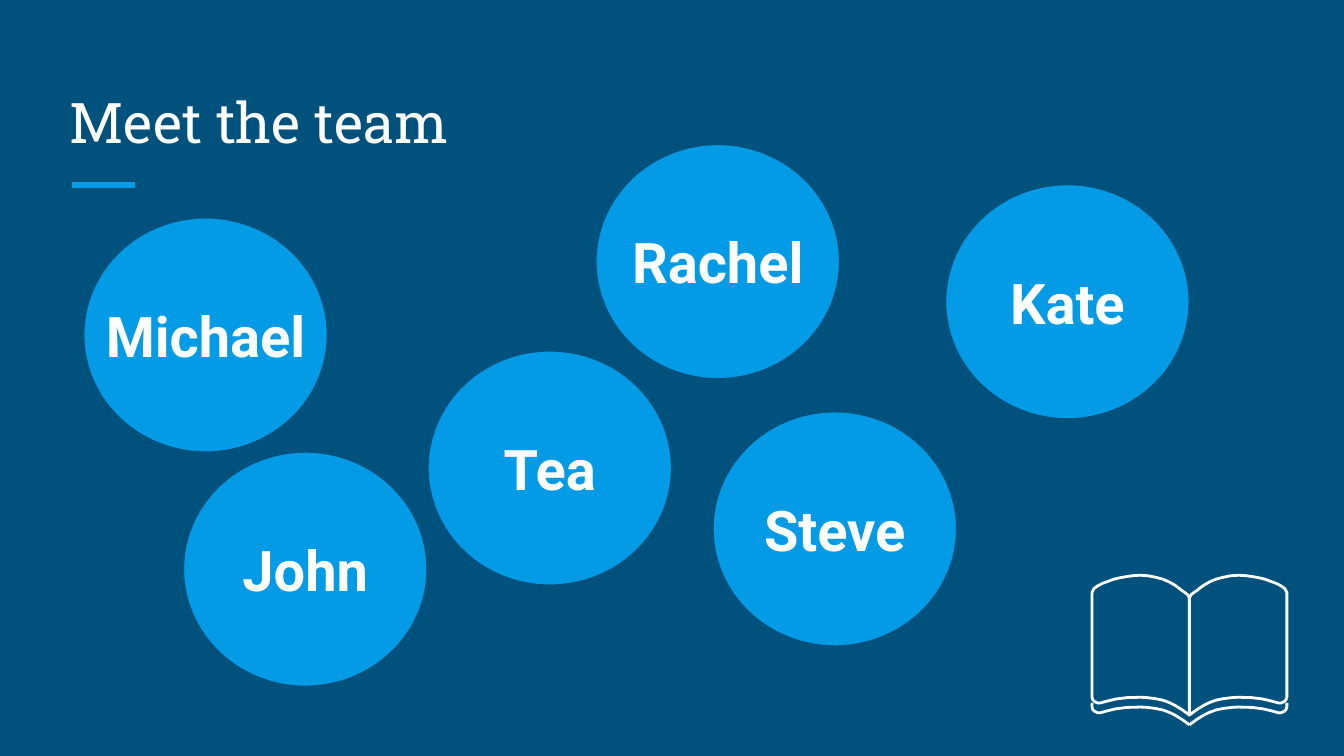
from lxml import etree
from pptx import Presentation
from pptx.dml.color import RGBColor
from pptx.enum import shapes, text
from pptx.oxml.ns import qn
from pptx.util import Pt

COLORS = {"back": "00517C", "accent": "039BE5", "white": "FFFFFF"}

# Left and top of each member's circle, in points
MEMBERS = {
    "Michael": (44.9, 116.7),
    "Rachel": (319.3, 77.4),
    "Tea": (229.3, 188),
    "John": (98.3, 242.2),
    "Steve": (382, 220.6),
    "Kate": (506.6, 98.9),
}
CIRCLE = (130.5, 125.5)
LABEL_HEIGHT = 58.5

# Half of the book: distance from the spine and from the top, in points
BOTTOM_EDGE = [
    (0, 74.9), (4, 72), (7.6, 69.8), (10.4, 68.4), (14, 67), (18.4, 66.1),
    (23.4, 65.5), (26.3, 65.4), (33.5, 65.6), (39.2, 66.3), (44.3, 67.5),
    (47.9, 68.5), (49.3, 68.4), (50.8, 67.7), (51.8, 66.7), (52.2, 65.3),
]
TOP_EDGE = [
    (52.2, 9.4), (51.8, 8.4), (51.1, 7.2), (49.3, 5.8), (46.4, 4.3),
    (43.6, 3.3), (40.7, 2.2), (37, 1.3), (33.5, 0.7), (30, 0.2), (26.3, 0),
    (22, 0.3), (17.6, 1.2), (14, 2.2), (11, 3.5), (8.3, 5), (6.1, 6.5),
    (4, 8.2), (1.8, 9.7), (0.8, 10.6), (0, 12.2),
]
COVER_DROP = 5.2


def color(name):
    return RGBColor.from_string(COLORS[name])


def add_text(parent, box, words, anchor, align, **font):
    label = parent.shapes.add_textbox(*map(Pt, box))
    frame = label.text_frame
    margins = {f"margin_{side}": Pt(7.2)
               for side in ("left", "top", "right", "bottom")}
    for key, value in {"word_wrap": True, "vertical_anchor": anchor,
                       **margins}.items():
        setattr(frame, key, value)
    para = frame.paragraphs[0]
    para.alignment = align
    span = para.add_run()
    span.text = words
    for key, value in {"size": Pt(30), **font}.items():
        setattr(span.font, key, value)
    span.font.color.rgb = color("white")


def add_heading(page, box):
    left, top, width, height = box
    add_text(page, box, "Meet the team", text.MSO_ANCHOR.BOTTOM,
             text.PP_ALIGN.LEFT, name="Roboto Slab")
    # Short rule under the title
    start, level = left + 8.6, top + height + 9.2
    rule = page.shapes.add_connector(
        shapes.MSO_CONNECTOR.STRAIGHT,
        Pt(start), Pt(level), Pt(start + 33.7), Pt(level))
    rule.line.color.rgb = color("accent")
    rule.line.width = Pt(3)
    etree.SubElement(rule._element.spPr, qn("a:effectLst"))


def add_member(page, box, name):
    left, top, width, height = box
    group = page.shapes.add_group_shape()
    circle = group.shapes.add_shape(shapes.MSO_SHAPE.OVAL, *map(Pt, box))
    circle.shadow.inherit = False
    circle.fill.solid()
    circle.fill.fore_color.rgb = color("accent")
    circle.line.color.rgb = color("back")
    circle.line.width = Pt(0.75)
    label_top = top + (height - LABEL_HEIGHT) / 2
    add_text(group, (left, label_top, width, LABEL_HEIGHT), name,
             text.MSO_ANCHOR.MIDDLE, text.PP_ALIGN.CENTER,
             name="Roboto", bold=True)


def add_book(page, box):
    left, top, width, height = box
    spine = left + width / 2
    group = page.shapes.add_group_shape()
    cover = [(x, y + COVER_DROP) for x, y in BOTTOM_EDGE] + [(52.2, 68.4)]
    leaf = BOTTOM_EDGE + TOP_EDGE
    # Each half mirrors the other across the spine
    for outline, closed in ((cover, False), (leaf, True)):
        for side in (-1, 1):
            points = [(Pt(spine + side * x), Pt(top + y)) for x, y in outline]
            builder = group.shapes.build_freeform(*points[0])
            builder.add_line_segments(points[1:], close=closed)
            half = builder.convert_to_shape()
            half.shadow.inherit = False
            half.fill.background()
            half.line.color.rgb = color("white")
            half.line.width = Pt(1.5)


def main():
    deck = Presentation()
    deck.slide_width, deck.slide_height = Pt(720), Pt(405)
    page = deck.slides.add_slide(deck.slide_layouts[6])
    page.background.fill.solid()
    page.background.fill.fore_color.rgb = color("back")

    add_heading(page, (30, 36, 659, 54))
    for name, corner in MEMBERS.items():
        add_member(page, corner + CIRCLE, name)
    add_book(page, (585, 308.2, 104.4, 80.1))
    deck.save("out.pptx")


if __name__ == "__main__":
    main()
